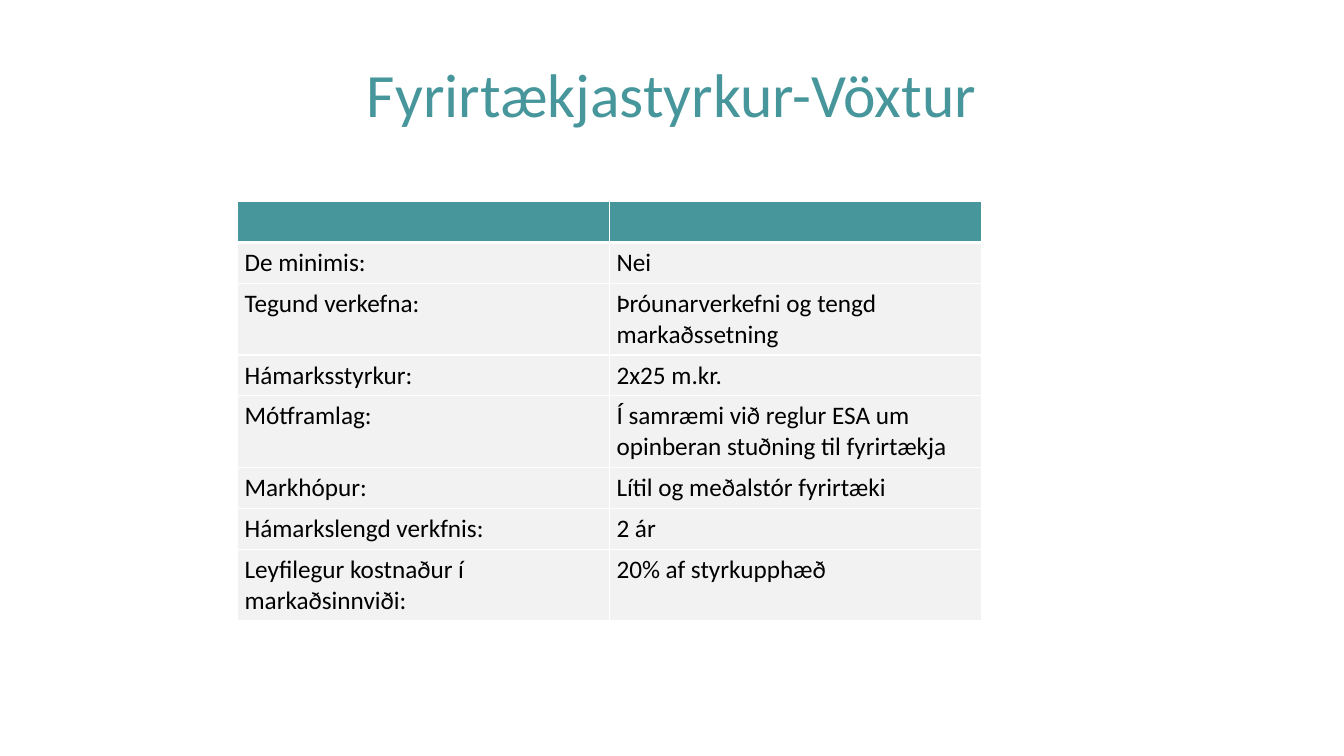
from lxml import etree
from pptx import Presentation
from pptx import util as u
from pptx.dml import color
from pptx.enum import text
from pptx.oxml import ns

ROWS = [
    ("", ""),
    ("De minimis:", "Nei"),
    ("Tegund verkefna:", "Þróunarverkefni og tengd markaðssetning"),
    ("Hámarksstyrkur:", "2x25 m.kr."),
    ("Mótframlag:", "Í samræmi við reglur ESA um opinberan stuðning til fyrirtækja"),
    ("Markhópur:", "Lítil og meðalstór fyrirtæki"),
    ("Hámarkslengd verkfnis:", "2 ár"),
    ("Leyfilegur kostnaður í markaðsinnviði:", "20% af styrkupphæð"),
]


class SlideBuilder:
    FONT = "Calibri"
    COLORS = {"teal": "46969B", "row": "F2F2F2", "white": "FFFFFF", "black": "000000"}

    def __init__(self, prs):
        self.s = prs.slides.add_slide(prs.slide_layouts[5])

    def rgb(self, name):
        return color.RGBColor.from_string(self.COLORS[name])

    def fill(self, target, name):
        target.fill.solid()
        target.fill.fore_color.rgb = self.rgb(name)

    def set_text(self, tf, content, size, name, align):
        p = tf.paragraphs[0]
        if content:
            p.text = content
        p.alignment = align
        p.font.name = self.FONT
        p.font.size = u.Pt(size)
        p.font.bold = False
        p.font.color.rgb = self.rgb(name)

    def title(self, content, left, top, width, height):
        sp = self.s.shapes.title
        sp.left, sp.top, sp.width, sp.height = map(u.Pt, (left, top, width, height))
        self.fill(sp, "white")
        tf = sp.text_frame
        tf.word_wrap = True
        tf.vertical_anchor = text.MSO_ANCHOR.MIDDLE
        self.set_text(tf, content, 44, "teal", text.PP_ALIGN.CENTER)

    def border(self, cell, side, width):
        tc_pr = cell._tc.get_or_add_tcPr()
        ln = etree.SubElement(tc_pr, ns.qn(f"a:ln{side}"), w=str(u.Pt(width)))
        line_fill = etree.SubElement(ln, ns.qn("a:solidFill"))
        etree.SubElement(line_fill, ns.qn("a:srgbClr"), val=self.COLORS["white"])

    def table(self, rows, left, top, col_width, row_height):
        cols = len(rows[0])
        frame = self.s.shapes.add_table(
            len(rows), cols, u.Pt(left), u.Pt(top),
            u.Pt(col_width * cols), u.Pt(row_height * len(rows)))
        table = frame.table
        for column in table.columns:
            column.width = u.Pt(col_width)
        for i, row in enumerate(rows):
            table.rows[i].height = u.Pt(row_height)
            for j, content in enumerate(row):
                cell = table.cell(i, j)
                cell.margin_left = cell.margin_right = u.Pt(5.2)
                cell.margin_top = cell.margin_bottom = u.Pt(3.6)
                for side in "LRTB":
                    header_edge = (i, side) in ((0, "B"), (1, "T"))
                    self.border(cell, side, 3 if header_edge else 1)
                self.fill(cell, "row" if i else "teal")
                self.set_text(cell.text_frame, content, 18, "black", text.PP_ALIGN.LEFT)


def main():
    prs = Presentation()
    prs.slide_width, prs.slide_height = u.Pt(960), u.Pt(540)
    slide = SlideBuilder(prs)
    slide.title("Fyrirtækjastyrkur-Vöxtur", 48, 21.6, 864, 90)
    slide.table(ROWS, 169.5, 144, 265.7, 29.2)
    prs.save("out.pptx")


if __name__ == "__main__":
    main()
